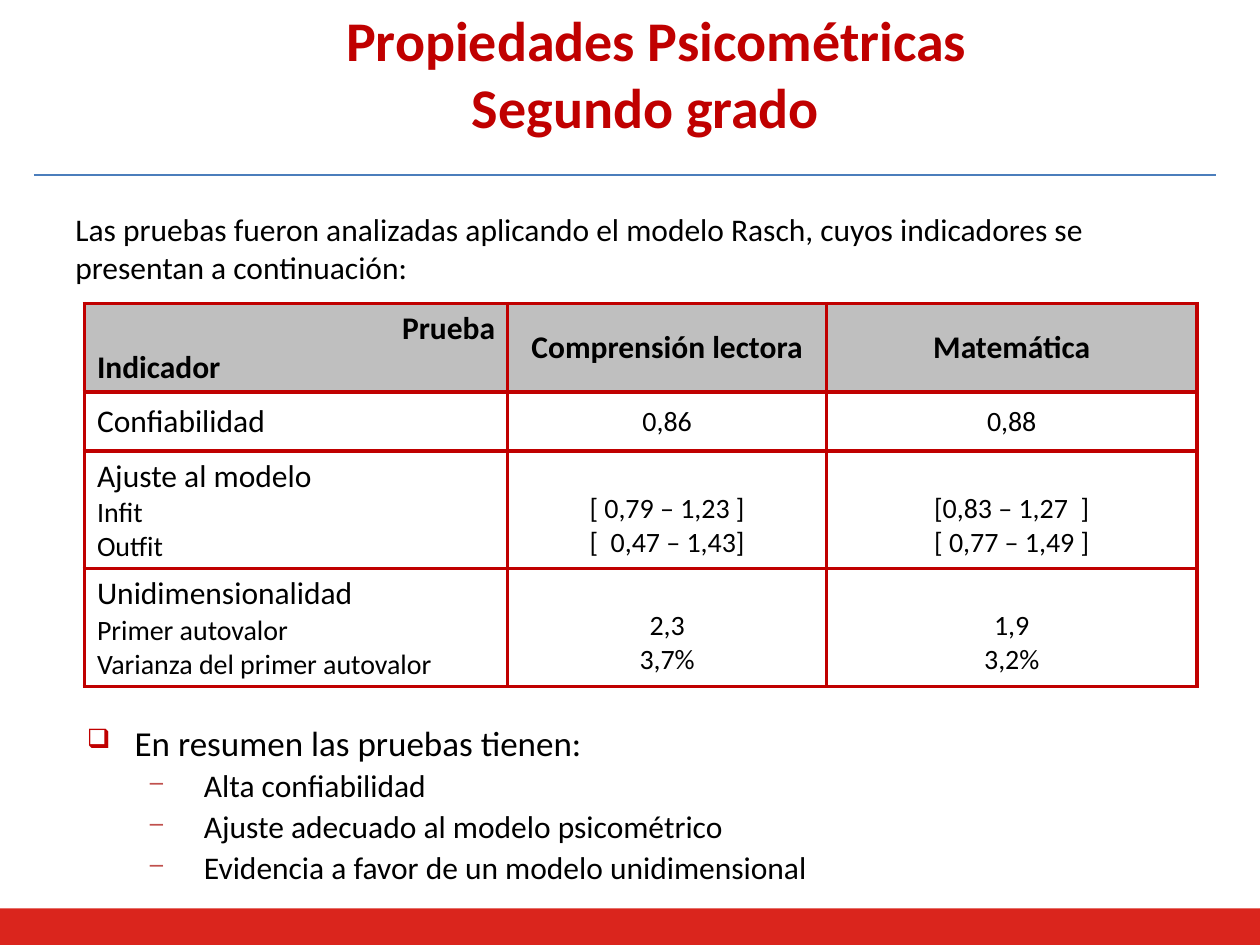
"""Build the slide on the psychometric properties of the second-grade tests."""
from lxml import etree
from pptx import Presentation
from pptx import util as u
from pptx.dml.color import RGBColor
from pptx.enum import shapes, text
from pptx.oxml import ns

RED = RGBColor(0xC0, 0x00, 0x00)
BAR = RGBColor(0xDA, 0x25, 0x1D)
BLUE = RGBColor(0x4B, 0x7E, 0xBC)
GRAY = RGBColor(0xBF, 0xBF, 0xBF)
BLACK = RGBColor(0, 0, 0)
ROSE = RGBColor(0xC0, 0x50, 0x4D)

LEFT, MID, RIGHT = text.PP_ALIGN.LEFT, text.PP_ALIGN.CENTER, text.PP_ALIGN.RIGHT
TOP, CENTER = text.MSO_ANCHOR.TOP, text.MSO_ANCHOR.MIDDLE

TITLE = [("Propiedades Psicométricas", 0.17), ("Segundo grado", 0)]
INTRO = ("Las pruebas fueron analizadas aplicando el modelo Rasch, "
         "cuyos indicadores se presentan a continuación:")
COLS = [3.36, 2.53, 2.94]
ROWS = [0.7, 0.47, 0.93, 0.93]
HEAD = [["Prueba", "Indicador"], ["Comprensión lectora"], ["Matemática"]]
DATA = [
    [["Confiabilidad"], ["0,86"], ["0,88"]],
    [["Ajuste al modelo", "Infit", "Outfit"],
     ["[ 0,79 – 1,23 ]", "[  0,47 – 1,43]"],
     ["[0,83 – 1,27  ]", "[ 0,77 – 1,49 ]"]],
    [["Unidimensionalidad", "Primer autovalor", "Varianza del primer autovalor"],
     ["2,3", "3,7%"],
     ["1,9", "3,2%"]],
]
SUMMARY = [
    ("En resumen las pruebas tienen:", 0),
    ("Alta confiabilidad", 1),
    ("Ajuste adecuado al modelo psicométrico", 1),
    ("Evidencia a favor de un modelo unidimensional", 1),
]
LEVELS = [("❑", RED, 0.38, 0.38, 20), ("–", ROSE, 0.93, 0.43, 18)]


def place(left, top, width, height):
    return [u.Inches(n) for n in (left, top, width, height)]


def write(para, words, size, color=BLACK, bold=False, align=LEFT):
    para.alignment = align
    run = para.add_run()
    run.text = words
    font = run.font
    font.name, font.size, font.bold = "Calibri", u.Pt(size), bold
    font.color.rgb = color


def lines(frame, items):
    for i, item in enumerate(items):
        yield (frame.paragraphs[0] if i == 0 else frame.add_paragraph()), item


def indent(para, left, hang=0):
    props = para._p.get_or_add_pPr()
    props.set("marL", str(u.Inches(left)))
    props.set("indent", str(-u.Inches(hang)))
    return props


def bullet(para, mark, color, left, hang):
    props = indent(para, left, hang)
    tint = etree.SubElement(props, ns.qn("a:buClr"))
    etree.SubElement(tint, ns.qn("a:srgbClr"), val=str(color))
    etree.SubElement(props, ns.qn("a:buSzPct"), val="76000")
    etree.SubElement(props, ns.qn("a:buChar"), char=mark)


def border(cell):
    props = cell._tc.get_or_add_tcPr()
    for i, side in enumerate(("lnL", "lnR", "lnT", "lnB")):
        edge = etree.Element(ns.qn(f"a:{side}"), w=str(u.Pt(2.25)))
        fill = etree.SubElement(edge, ns.qn("a:solidFill"))
        etree.SubElement(fill, ns.qn("a:srgbClr"), val=str(RED))
        props.insert(i, edge)


def add_box(slide, *spot):
    frame = slide.shapes.add_textbox(*place(*spot)).text_frame
    frame.word_wrap = True
    return frame


def add_title(slide):
    title = slide.shapes.title
    title.left, title.top, title.width, title.height = place(1.44, 0.04, 7.37, 1.25)
    frame = title.text_frame
    frame.vertical_anchor = TOP
    frame.margin_top = 0
    for para, (words, left) in lines(frame, TITLE):
        indent(para, left)
        write(para, words, 32, RED, True, MID)


def add_table(slide):
    table = slide.shapes.add_table(
        len(ROWS), len(COLS), *place(0.67, 2.41, sum(COLS), sum(ROWS))).table
    table.first_row = table.horz_banding = False
    for col, width in zip(table.columns, COLS):
        col.width = u.Inches(width)
    for r, (cells, height) in enumerate(zip([HEAD] + DATA, ROWS)):
        table.rows[r].height = u.Inches(height)
        for c, words in enumerate(cells):
            cell = table.cell(r, c)
            if r == 0:
                cell.fill.solid()
                cell.fill.fore_color.rgb = GRAY
            else:
                cell.fill.background()
            border(cell)
            cell.vertical_anchor = CENTER if len(words) == 1 else TOP
            if c and len(words) > 1:
                cell.margin_top = u.Inches(0.32)
            for i, (para, line) in enumerate(lines(cell.text_frame, words)):
                size = 18 if r == 0 or (c == 0 and i == 0) else 16
                align = MID if c else RIGHT if r == i == 0 else LEFT
                write(para, line, size, bold=r == 0, align=align)


def add_summary(slide):
    frame = add_box(slide, 0.59, 5.74, 8.82, 1.45)
    for para, (words, level) in lines(frame, SUMMARY):
        mark, color, left, hang, size = LEVELS[level]
        para.level = level
        bullet(para, mark, color, left, hang)
        para.line_spacing = 0.8
        para.space_after = u.Pt(6)
        write(para, words, size, align=text.PP_ALIGN.JUSTIFY)


def main():
    deck = Presentation()
    deck.slide_width, deck.slide_height = u.Inches(10), u.Inches(7.5)
    slide = deck.slides.add_slide(deck.slide_layouts[5])

    bar = slide.shapes.add_shape(
        shapes.MSO_SHAPE.RECTANGLE, *place(0, 7.21, 10, 0.29))
    bar.shadow.inherit = False
    bar.fill.solid()
    bar.fill.fore_color.rgb = BAR
    bar.line.fill.background()

    add_title(slide)
    rule = slide.shapes.add_connector(
        shapes.MSO_CONNECTOR.STRAIGHT, *place(0.27, 1.39, 9.65, 1.39))
    rule.line.color.rgb = BLUE
    rule.line.width = u.Pt(0.75)
    etree.SubElement(rule._element.spPr, ns.qn("a:effectLst"))

    intro = add_box(slide, 0.5, 1.62, 9, 0.75)
    write(intro.paragraphs[0], INTRO, 18)
    add_table(slide)
    add_summary(slide)
    deck.save("out.pptx")


if __name__ == "__main__":
    main()
